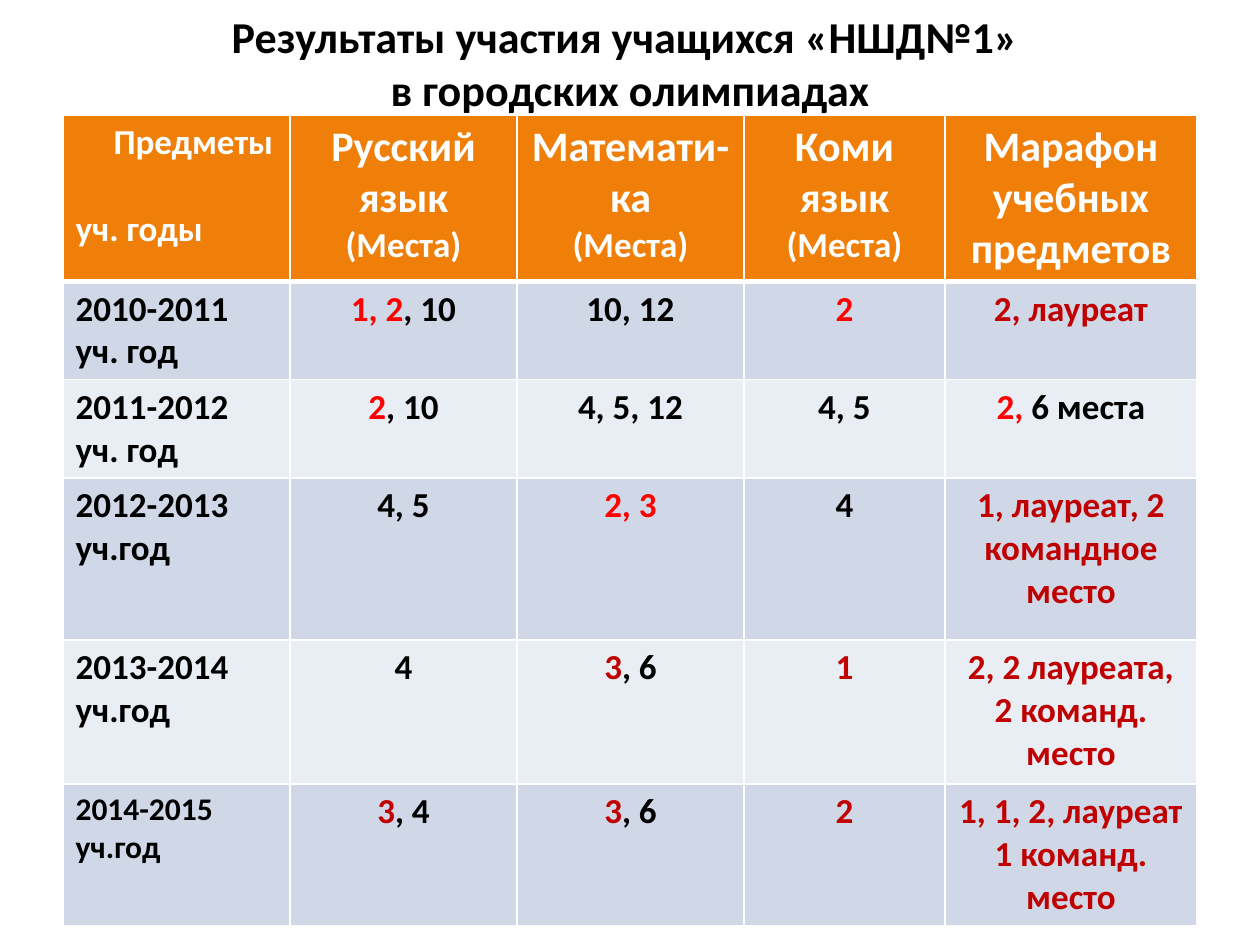
from dataclasses import dataclass

from lxml.etree import SubElement
from pptx import Presentation
from pptx.dml.color import RGBColor
from pptx.enum.text import MSO_ANCHOR, MSO_AUTO_SIZE, PP_ALIGN
from pptx.oxml.ns import qn
from pptx.util import Emu, Pt

PX_PER_INCH = 126
FONT = "Calibri"
COLORS = {
    "white": "FFFFFF",
    "black": "000000",
    "red": "FF0000",
    "crimson": "C00000",
    "header": "F07F09",
    "band_dark": "D0D8E8",
    "band_light": "E9EDF4",
}


@dataclass(frozen=True)
class Piece:
    text: str
    color: str = "black"
    size: float = 20


@dataclass(frozen=True)
class Line:
    pieces: tuple[Piece, ...]
    indent: int = 0
    space_before: int = 0


def px(length: int) -> Emu:
    return Emu(round(length * 914400 / PX_PER_INCH))


def rgb(name: str) -> RGBColor:
    return RGBColor.from_string(COLORS[name])


def line(text: str, color: str = "black", size: float = 20, **layout: int) -> Line:
    return Line((Piece(text, color, size),), **layout)


def head(text: str, size: float = 24, **layout: int) -> Line:
    return line(text, "white", size, **layout)


def mixed(placed: str, rest: str, color: str) -> list[Line]:
    return [Line((Piece(placed, color), Piece(rest)))]


def style_run(run, color: str, size: float) -> None:
    run.font.name = FONT
    run.font.bold = True
    run.font.size = Pt(size)
    run.font.color.rgb = rgb(color)


def write_lines(text_frame, lines: list[Line], alignment: PP_ALIGN) -> None:
    for index, content in enumerate(lines):
        paragraph = text_frame.paragraphs[0] if index == 0 else text_frame.add_paragraph()
        paragraph.alignment = alignment
        paragraph.space_before = Pt(content.space_before)
        if content.indent:
            paragraph._p.get_or_add_pPr().set("marL", str(px(content.indent)))
        for piece in content.pieces:
            run = paragraph.add_run()
            run.text = piece.text
            style_run(run, piece.color, piece.size)


def set_borders(cell, top: int, bottom: int) -> None:
    properties = cell._tc.get_or_add_tcPr()
    for side, width in (("L", 1), ("R", 1), ("T", top), ("B", bottom)):
        border = SubElement(properties, qn(f"a:ln{side}"), w=str(Pt(width)))
        fill = SubElement(border, qn("a:solidFill"))
        SubElement(fill, qn("a:srgbClr"), val=COLORS["white"])


def add_title(slide, text: str) -> None:
    title = slide.shapes.title
    title.left, title.top, title.width, title.height = px(63), px(0), px(1134), px(125)
    text_frame = title.text_frame
    text_frame.text = text
    text_frame.word_wrap = True
    text_frame.auto_size = MSO_AUTO_SIZE.NONE
    text_frame.vertical_anchor = MSO_ANCHOR.MIDDLE
    paragraph = text_frame.paragraphs[0]
    paragraph.alignment = PP_ALIGN.CENTER
    for run in paragraph.runs:
        style_run(run, "black", 25.2)


def add_results_table(slide, rows: list[list[list[Line]]]) -> None:
    widths = (227, 227, 227, 201, 252)
    heights = (164, 97, 97, 162, 144, 138)
    table = slide.shapes.add_table(
        len(rows), len(widths), px(63), px(115), px(sum(widths)), px(sum(heights))
    ).table
    for column, width in zip(table.columns, widths):
        column.width = px(width)
    for row, height in zip(table.rows, heights):
        row.height = px(height)
    for row_index, cells in enumerate(rows):
        fill = "header" if row_index == 0 else ("band_light", "band_dark")[row_index % 2]
        for column_index, lines in enumerate(cells):
            cell = table.cell(row_index, column_index)
            set_borders(cell, 3 if row_index == 1 else 1, 3 if row_index == 0 else 1)
            cell.fill.solid()
            cell.fill.fore_color.rgb = rgb(fill)
            alignment = PP_ALIGN.CENTER if column_index else PP_ALIGN.LEFT
            write_lines(cell.text_frame, lines, alignment)


# Table content: header row, then one row per school year
PLACES = head("(Места)", 20)
ROWS = [
    [
        [head("Предметы", 20, indent=38), head("уч. годы", 20, space_before=25)],
        [head("Русский язык"), PLACES],
        [head("Математи-ка"), PLACES],
        [Line((Piece("Коми язык ", "white", 24), *PLACES.pieces))],
        [head("Марафон учебных предметов")],
    ],
    [
        [line("2010-2011"), line("уч. год")],
        mixed("1, 2", ", 10", "red"),
        [line("10, 12")],
        [line("2", "red")],
        [line("2, лауреат", "crimson")],
    ],
    [
        [line("2011-2012"), line("уч. год")],
        mixed("2", ", 10", "red"),
        [line("4, 5, 12")],
        [line("4, 5")],
        mixed("2, ", "6 места", "red"),
    ],
    [
        [line("2012-2013"), line("уч.год")],
        [line("4, 5")],
        [line("2, 3", "red")],
        [line("4")],
        [line("1, лауреат, 2 командное место", "crimson")],
    ],
    [
        [line("2013-2014 уч.год")],
        [line("4")],
        mixed("3", ", 6", "crimson"),
        [line("1", "crimson")],
        [line("2, 2 лауреата,", "crimson"), line("2 команд. место", "crimson")],
    ],
    [
        [line("2014-2015", size=18), line("уч.год", size=18)],
        mixed("3", ", 4", "crimson"),
        mixed("3", ", 6", "crimson"),
        [line("2", "crimson")],
        [line("1, 1, 2, лауреат", "crimson"), line("1 команд. место", "crimson")],
    ],
]


def main() -> None:
    presentation = Presentation()
    presentation.slide_width, presentation.slide_height = px(1260), px(945)
    slide = presentation.slides.add_slide(presentation.slide_layouts[5])
    slide.background.fill.solid()
    slide.background.fill.fore_color.rgb = rgb("white")
    add_title(slide, "Результаты участия учащихся «НШД№1» \vв городских олимпиадах")
    add_results_table(slide, ROWS)
    presentation.save("out.pptx")


if __name__ == "__main__":
    main()
